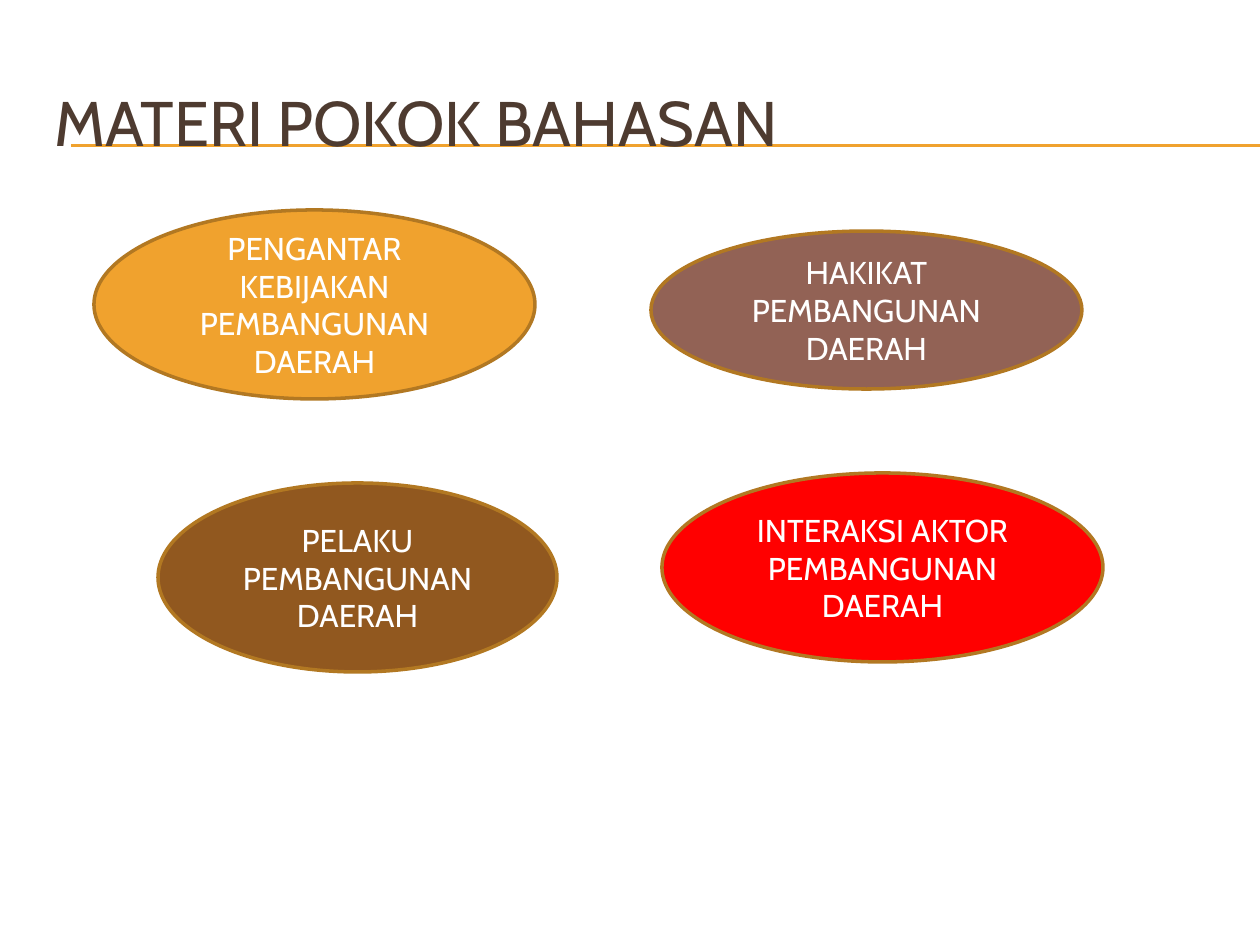
from dataclasses import dataclass
from typing import Any

from lxml.etree import SubElement
from pptx import Presentation
from pptx.dml.color import RGBColor
from pptx.enum.shapes import MSO_CONNECTOR, MSO_SHAPE
from pptx.enum.text import MSO_ANCHOR, PP_ALIGN
from pptx.oxml.ns import qn
from pptx.util import Emu, Pt

PIXELS_PER_INCH = 126
SLIDE_WIDTH, SLIDE_HEIGHT = 1260, 945


@dataclass(frozen=True)
class Theme:
    font: str = "Cabin"
    title_size: int = 36
    topic_size: int = 18
    title: str = "4E3B30"
    topic_text: str = "FFFFFF"
    outline: str = "B27822"
    outline_width: int = 2
    rule_width: float = 0.75
    orange: str = "F0A22E"
    mauve: str = "926255"
    brown: str = "91581F"
    red: str = "FF0000"


@dataclass(frozen=True)
class Box:
    left: int
    top: int
    width: int
    height: int

    def emu(self) -> tuple[Emu, ...]:
        return tuple(px(n) for n in (self.left, self.top, self.width, self.height))


@dataclass(frozen=True)
class Topic:
    text: str
    box: Box
    fill: str


THEME = Theme()
TITLE_BOX = Box(42, 63, 1197, 116)
RULE_LEFT = 71
RULE_TOPS = (145, 146)
TOPICS = (
    Topic("PENGANTAR KEBIJAKAN PEMBANGUNAN DAERAH", Box(94, 210, 441, 189), THEME.orange),
    Topic("HAKIKAT PEMBANGUNAN DAERAH", Box(651, 231, 431, 158), THEME.mauve),
    Topic("PELAKU PEMBANGUNAN DAERAH", Box(158, 483, 399, 189), THEME.brown),
    Topic("INTERAKSI AKTOR PEMBANGUNAN DAERAH", Box(662, 473, 441, 189), THEME.red),
)


def px(length: int) -> Emu:
    return Emu(round(length * 914400 / PIXELS_PER_INCH))


def write_text(shape: Any, text: str, size: int, color: str, alignment: PP_ALIGN) -> None:
    frame = shape.text_frame
    frame.word_wrap = True
    frame.vertical_anchor = MSO_ANCHOR.MIDDLE
    paragraph = frame.paragraphs[0]
    paragraph.alignment = alignment
    run = paragraph.add_run()
    run.text = text
    for name, value in {"name": THEME.font, "size": Pt(size)}.items():
        setattr(run.font, name, value)
    run.font.color.rgb = RGBColor.from_string(color)


def set_line(shape: Any, color: str, width: float) -> None:
    shape.line.color.rgb = RGBColor.from_string(color)
    shape.line.width = Pt(width)


def draw_rule(slide: Any, top: int) -> None:
    rule = slide.shapes.add_connector(
        MSO_CONNECTOR.STRAIGHT, px(RULE_LEFT), px(top), px(SLIDE_WIDTH), px(top)
    )
    set_line(rule, THEME.orange, THEME.rule_width)
    SubElement(rule._element.spPr, qn("a:effectLst"))


def draw_topic(slide: Any, topic: Topic) -> None:
    ellipse = slide.shapes.add_shape(MSO_SHAPE.OVAL, *topic.box.emu())
    ellipse.shadow.inherit = False
    ellipse.fill.solid()
    ellipse.fill.fore_color.rgb = RGBColor.from_string(topic.fill)
    set_line(ellipse, THEME.outline, THEME.outline_width)
    write_text(ellipse, topic.text, THEME.topic_size, THEME.topic_text, PP_ALIGN.CENTER)


def main() -> None:
    presentation = Presentation()
    presentation.slide_width = px(SLIDE_WIDTH)
    presentation.slide_height = px(SLIDE_HEIGHT)
    slide = presentation.slides.add_slide(presentation.slide_layouts[6])
    for top in RULE_TOPS:
        draw_rule(slide, top)
    title = slide.shapes.add_textbox(*TITLE_BOX.emu())
    write_text(title, "MATERI POKOK BAHASAN", THEME.title_size, THEME.title, PP_ALIGN.LEFT)
    for topic in TOPICS:
        draw_topic(slide, topic)
    presentation.save("out.pptx")


if __name__ == "__main__":
    main()
